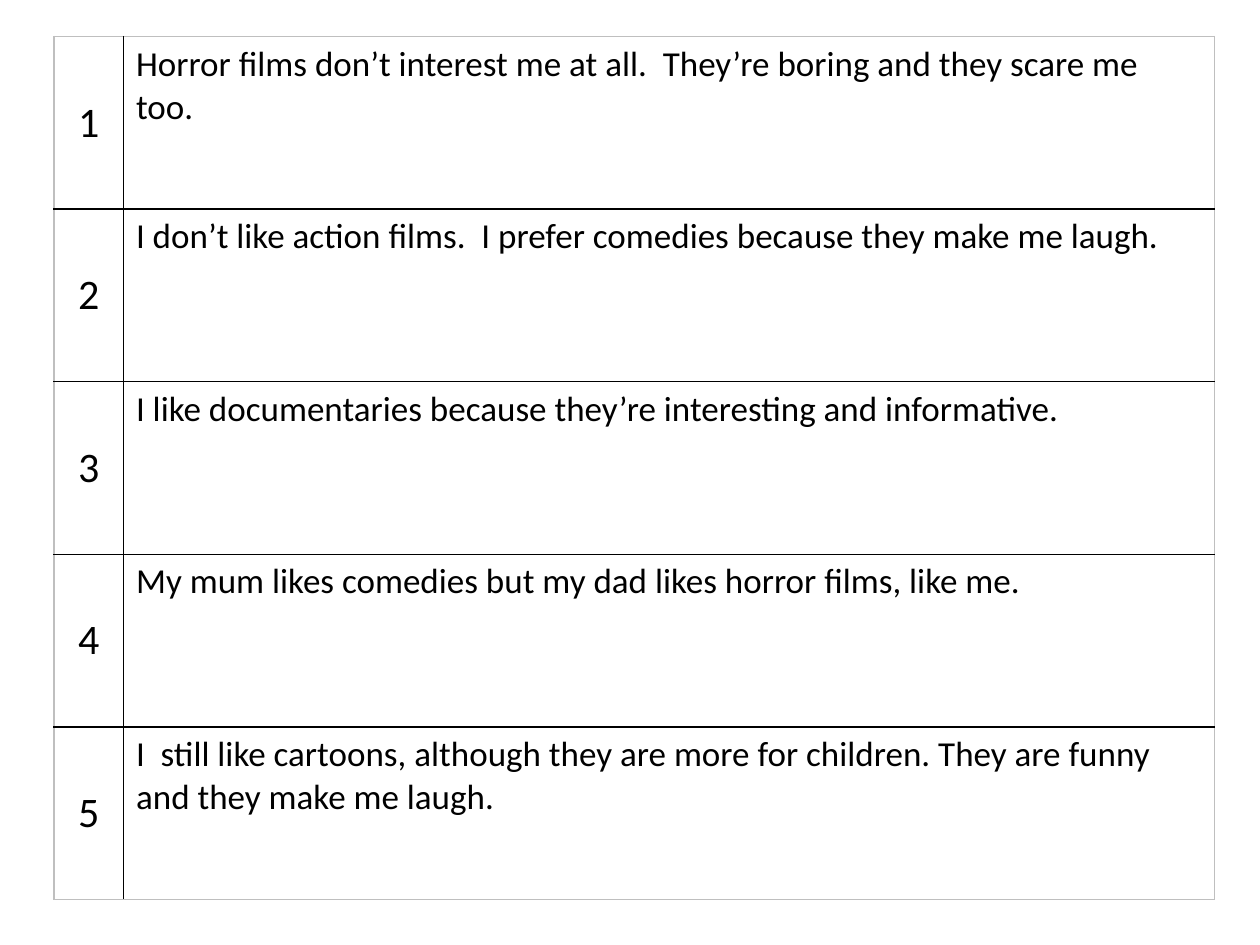
from dataclasses import dataclass

from lxml.etree import SubElement
from pptx import Presentation
from pptx.dml.color import RGBColor
from pptx.enum.text import MSO_ANCHOR, PP_ALIGN
from pptx.oxml.ns import qn
from pptx.util import Inches, Pt

SENTENCES = [
    "Horror films don’t interest me at all.  They’re boring and they scare me too.",
    "I don’t like action films.  I prefer comedies because they make me laugh.",
    "I like documentaries because they’re interesting and informative.",
    "My mum likes comedies but my dad likes horror films, like me.",
    "I  still like cartoons, although they are more for children. "
    "They are funny and they make me laugh.",
]


@dataclass(frozen=True)
class Theme:
    font: str = "Calibri"
    ink: str = "000000"
    frame: str = "BFBFBF"
    number_size: int = 24
    sentence_size: int = 20
    line_width: int = 1


THEME = Theme()
LEFT, TOP = 0.43, 0.29
COLUMN_WIDTHS = [0.55, 8.66]
ROW_HEIGHT = 1.37


def write_cell(cell, text, size):
    cell.text_frame.text = text
    font = cell.text_frame.paragraphs[0].runs[0].font
    font.name = THEME.font
    font.size = Pt(size)
    font.color.rgb = RGBColor.from_string(THEME.ink)


def set_borders(cell, row, column, last_row, last_column):
    """Draw black inner lines and a grey outer frame, then clear the fill."""
    outer_edges = {
        "a:lnL": column == 0,
        "a:lnR": column == last_column,
        "a:lnT": row == 0,
        "a:lnB": row == last_row,
    }
    properties = cell._tc.get_or_add_tcPr()
    for tag, is_outer in outer_edges.items():
        line = SubElement(properties, qn(tag), w=str(Pt(THEME.line_width)))
        fill = SubElement(line, qn("a:solidFill"))
        SubElement(fill, qn("a:srgbClr"), val=THEME.frame if is_outer else THEME.ink)
    cell.fill.background()


def add_sentence_table(page):
    row_count, column_count = len(SENTENCES), len(COLUMN_WIDTHS)
    table = page.shapes.add_table(
        row_count, column_count, Inches(LEFT), Inches(TOP),
        Inches(sum(COLUMN_WIDTHS)), Inches(ROW_HEIGHT * row_count),
    ).table
    table.first_row = False
    table.horz_banding = False
    for column, width in zip(table.columns, COLUMN_WIDTHS):
        column.width = Inches(width)

    for row, sentence in enumerate(SENTENCES):
        table.rows[row].height = Inches(ROW_HEIGHT)
        number_cell, sentence_cell = table.cell(row, 0), table.cell(row, 1)
        write_cell(number_cell, str(row + 1), THEME.number_size)
        number_cell.vertical_anchor = MSO_ANCHOR.MIDDLE
        number_cell.text_frame.paragraphs[0].alignment = PP_ALIGN.CENTER
        write_cell(sentence_cell, sentence, THEME.sentence_size)
        for column, cell in enumerate((number_cell, sentence_cell)):
            set_borders(cell, row, column, row_count - 1, column_count - 1)


def main():
    deck = Presentation()
    deck.slide_width, deck.slide_height = Inches(10), Inches(7.5)
    page = deck.slides.add_slide(deck.slide_layouts[6])
    add_sentence_table(page)
    deck.save("out.pptx")


if __name__ == "__main__":
    main()
